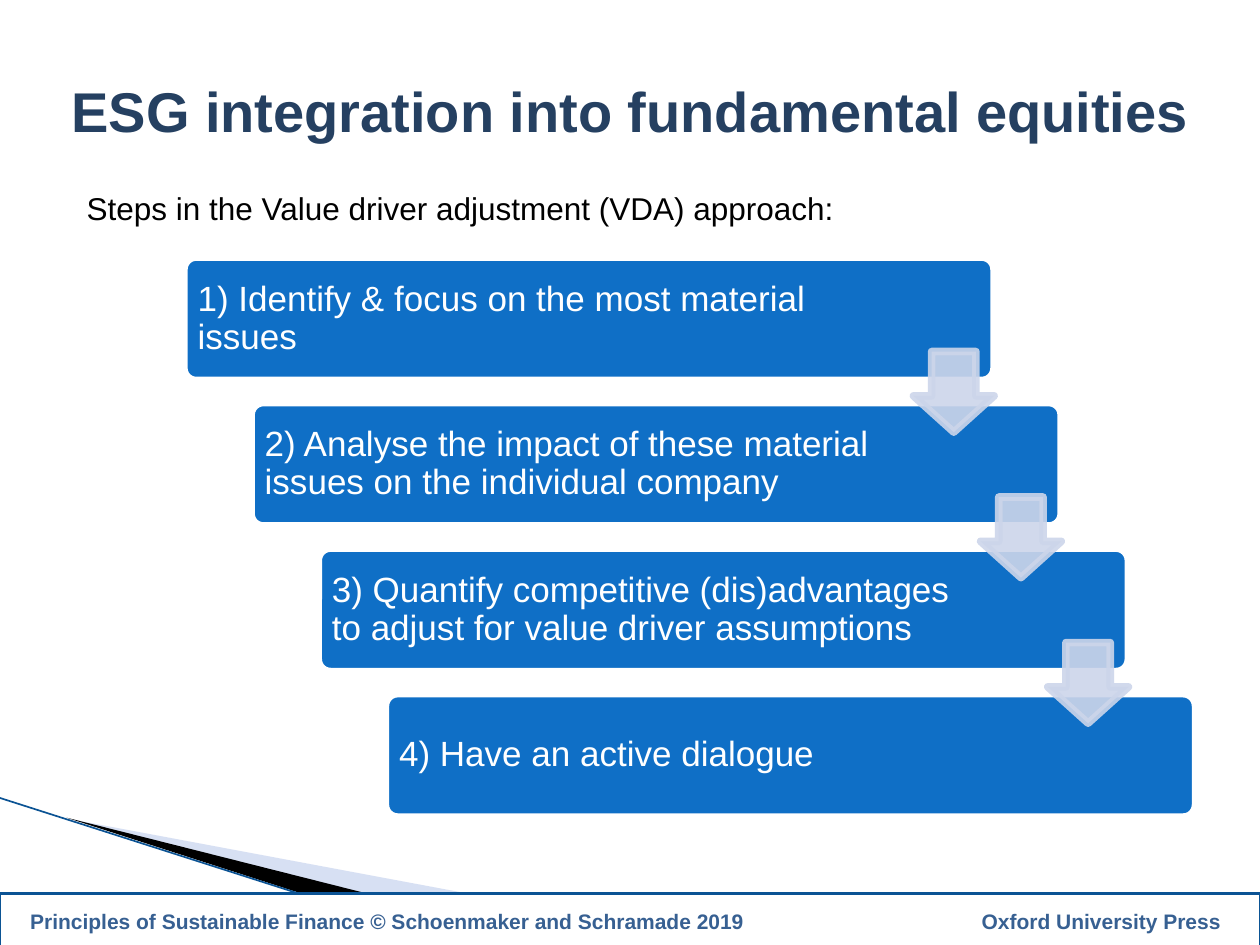
from dataclasses import dataclass
from lxml import etree
from pptx import Presentation
from pptx.dml.color import RGBColor
from pptx.enum.shapes import MSO_CONNECTOR, MSO_SHAPE
from pptx.enum.text import MSO_ANCHOR, PP_ALIGN
from pptx.oxml.ns import qn
from pptx.util import Inches, Pt

RECT, ROUND = MSO_SHAPE.RECTANGLE, MSO_SHAPE.ROUNDED_RECTANGLE
ARROW, LINE = MSO_SHAPE.DOWN_ARROW, MSO_CONNECTOR.STRAIGHT
MID, TOP = MSO_ANCHOR.MIDDLE, MSO_ANCHOR.TOP
LEFT, CENTER = PP_ALIGN.LEFT, PP_ALIGN.CENTER
WHITE, BLUE, PALE, EDGE = "FFFFFF", "0F6FC6", "CCD5EA", "0B5394"
STEP_X, STEP_Y = 0.533, 1.155


@dataclass
class Box:
    """Place and size in inches."""
    x: float
    y: float
    w: float
    h: float

    def emu(self) -> list:
        return [Inches(v) for v in (self.x, self.y, self.w, self.h)]

    def shift(self, n: int) -> "Box":
        return Box(self.x + n * STEP_X, self.y + n * STEP_Y, self.w, self.h)


@dataclass
class Font:
    """Look of a run."""
    size: float
    color: str
    bold: bool = False


@dataclass
class Wedge:
    """Filled corner outline."""
    points: list
    color: str
    alpha: int = 100


FIRST = Box(1.46, 2.04, 6.43, 0.98)
DROP = Box(7.25, 2.79, 0.64, 0.64)
STEPS = [
    "1) Identify & focus on the most material issues",
    "2) Analyse the impact of these material issues on the individual company",
    "3) Quantify competitive (dis)advantages to adjust for value driver assumptions",
    "4) Have an active dialogue",
]
WEDGES = [
    Wedge([(0.55, 6.5), (5.95, 7.51), (4.56, 7.51)], "9DB2E1", 40),
    Wedge([(0.53, 6.49), (4.57, 7.51), (3.72, 7.52)], "000000"),
]


def paint(part, color: str, alpha: int = 100) -> None:
    """Give a fill a solid colour with the given opacity."""
    part.solid()
    part.fore_color.rgb = RGBColor.from_string(color)
    if alpha < 100:
        tone = part._xPr.find(qn("a:solidFill"))[0]
        etree.SubElement(tone, qn("a:alpha"), val=str(alpha * 1000))


def style(shape, fill: str, line: str = "", width: float = 0, alpha: int = 100) -> None:
    """Set fill, outline and shadow of a shape."""
    shape.shadow.inherit = False
    paint(shape.fill, fill, alpha)
    if line:
        paint(shape.line.fill, line, alpha)
        shape.line.width = Pt(width)
    else:
        shape.line.fill.background()


def write(shape, text: str, font: Font, align=LEFT, anchor=MID,
          left: float = 0.1, right: float = 0.1, space: float = 1.0):
    """Write one paragraph and return it."""
    frame = shape.text_frame
    frame.word_wrap = True
    frame.vertical_anchor = anchor
    frame.margin_left, frame.margin_right = Inches(left), Inches(right)
    para = frame.paragraphs[0]
    para.alignment, para.line_spacing = align, space
    run = para.add_run()
    run.text = text
    run.font.name, run.font.size, run.font.bold = "Arial", Pt(font.size), font.bold
    run.font.color.rgb = RGBColor.from_string(font.color)
    return para


def corner(shapes) -> None:
    """Draw the wedges and the line at the lower left."""
    for wedge in WEDGES:
        start, *rest = [(Inches(x), Inches(y)) for x, y in wedge.points]
        form = shapes.build_freeform(*start)
        form.add_line_segments(rest)
        style(form.convert_to_shape(), wedge.color, alpha=wedge.alpha)
    line = shapes.add_connector(LINE, Inches(-0.01), Inches(6.33), Inches(3.71), Inches(7.52))
    paint(line.line.fill, EDGE)
    line.line.width = Pt(0.95)
    etree.SubElement(line._element.spPr, qn("a:effectLst"))


def footer(shapes) -> None:
    """Draw the footer bar with text at both ends."""
    bar = shapes.add_shape(RECT, *Box(0, 7.09, 10, 0.44).emu())
    style(bar, WHITE, EDGE, 1.5)
    para = write(bar, "Principles of Sustainable Finance © Schoenmaker and Schramade 2019"
                 "\tOxford University Press", Font(12, "376092", True), left=0.24)
    tabs = etree.SubElement(para._p.get_or_add_pPr(), qn("a:tabLst"))
    etree.SubElement(tabs, qn("a:tab"), pos=str(Inches(9.45)), algn="r")


def cascade(shapes) -> None:
    """Draw the steps and the arrows between them."""
    for n, text in enumerate(STEPS):
        card = shapes.add_shape(ROUND, *FIRST.shift(n).emu())
        card.adjustments[0] = 0.1
        style(card, BLUE, WHITE, 4.33)
        write(card, text, Font(20, WHITE), left=0.08, right=1.2, space=0.9)
    for n in range(len(STEPS) - 1):
        arrow = shapes.add_shape(ARROW, *DROP.shift(n).emu())
        arrow.adjustments[0], arrow.adjustments[1] = 0.55, 0.45
        style(arrow, PALE, PALE, 4.33, 90)


def main() -> None:
    """Build the slide and save it."""
    deck = Presentation()
    deck.slide_width, deck.slide_height = Inches(10), Inches(7.5)
    shapes = deck.slides.add_slide(deck.slide_layouts[6]).shapes
    corner(shapes)
    title = shapes.add_shape(RECT, *Box(0.28, 0.52, 9.45, 0.71).emu())
    style(title, WHITE)
    write(title, "ESG integration into fundamental equities", Font(32, "254061", True), CENTER)
    footer(shapes)
    intro = shapes.add_textbox(*Box(0.59, 1.39, 8.66, 0.63).emu())
    write(intro, "Steps in the Value driver adjustment (VDA) approach:",
          Font(18, "000000"), anchor=TOP, space=1.2)
    cascade(shapes)
    deck.save("out.pptx")


if __name__ == "__main__":
    main()
